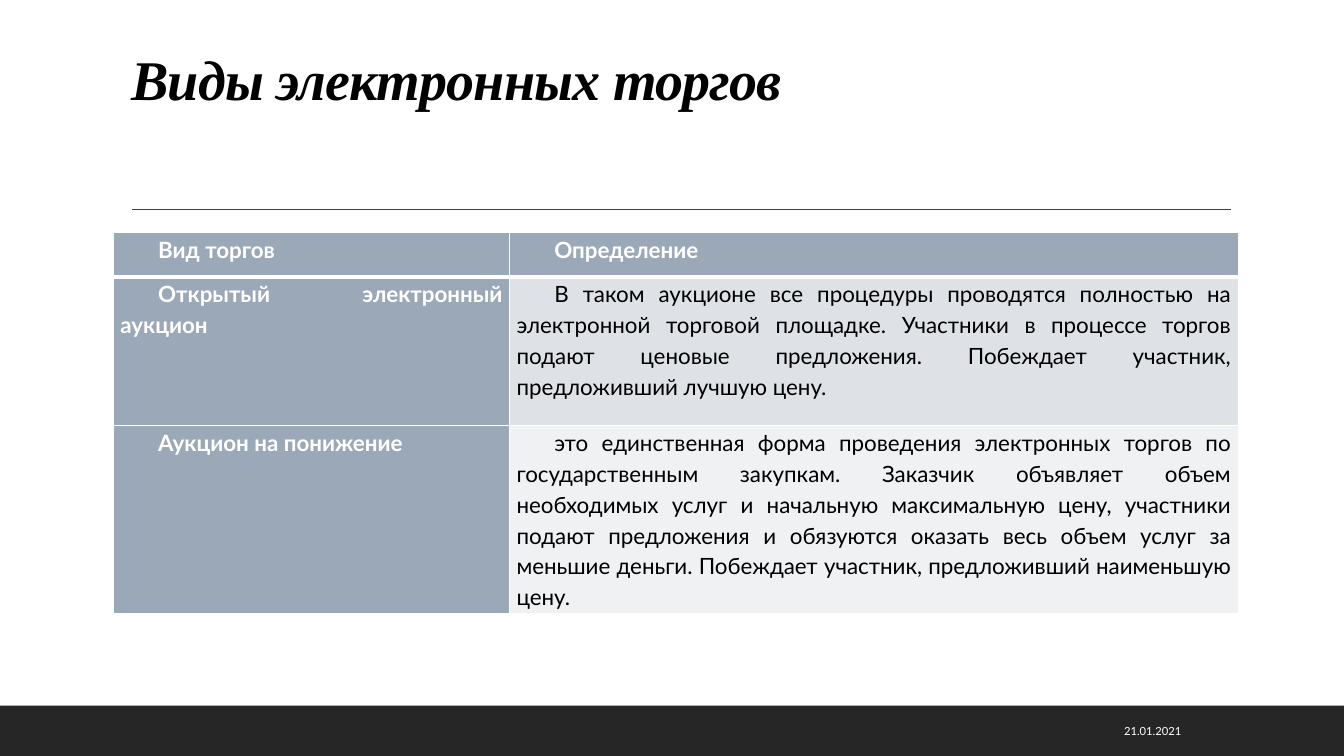
"""Build the slide on the kinds of electronic auctions."""
from typing import NamedTuple

from lxml.etree import SubElement
from pptx import Presentation
from pptx.dml.color import RGBColor
from pptx.enum.shapes import MSO_CONNECTOR, MSO_SHAPE
from pptx.enum.text import MSO_ANCHOR, MSO_AUTO_SIZE, PP_ALIGN
from pptx.oxml.ns import qn
from pptx.util import Pt

WHITE, BLACK, HEAD_FILL = "FFFFFF", "000000", "9BA8B7"


class Row(NamedTuple):
    kind: str
    definition: str
    height: float
    fill: str
    color: str
    bold: bool
    top: float
    bottom: float


ROWS = [
    Row("Вид торгов", "Определение", 31.7, HEAD_FILL, WHITE, True, 1, 3),
    Row("Открытый электронный аукцион",
        "В таком аукционе все процедуры проводятся полностью "
        "на электронной торговой площадке. Участники в процессе торгов "
        "подают ценовые предложения. Побеждает участник, "
        "предложивший лучшую цену.",
        106.5, "DEE1E6", BLACK, False, 3, 1),
    Row("Аукцион на понижение",
        "это единственная форма проведения электронных торгов "
        "по государственным закупкам. Заказчик объявляет объем "
        "необходимых услуг и начальную максимальную цену, участники "
        "подают предложения и обязуются оказать весь объем услуг "
        "за меньшие деньги. Побеждает участник, предложивший "
        "наименьшую цену.",
        133.9, "EFF1F3", BLACK, False, 1, 1),
]


def rgb(color: str) -> RGBColor:
    return RGBColor.from_string(color)


def add_run(p, text: str, size: float, color: str, bold=False, font="Lato"):
    r = p.add_run()
    r.text = text
    r.font.name, r.font.size, r.font.bold = font, Pt(size), bold
    r.font.color.rgb = rgb(color)
    return r


def add_title(s) -> None:
    sp = s.shapes.title
    sp.left, sp.top, sp.width, sp.height = Pt(86.4), Pt(22.3), Pt(792), Pt(114.5)
    tf = sp.text_frame
    tf.word_wrap, tf.auto_size = True, MSO_AUTO_SIZE.NONE
    tf.vertical_anchor, tf.margin_top = MSO_ANCHOR.TOP, Pt(15.2)
    p = tf.paragraphs[0]
    p.alignment, p.line_spacing = PP_ALIGN.LEFT, 0.9
    r = add_run(p, "Виды электронных торгов", 40, BLACK, True, "Times New Roman")
    r.font.italic = True
    r._r.get_or_add_rPr().set("spc", "-50")


def add_rule(s) -> None:
    line = s.shapes.add_connector(
        MSO_CONNECTOR.STRAIGHT, Pt(94.3), Pt(149.8), Pt(879.1), Pt(149.8))
    line.line.color.rgb, line.line.width = rgb("404040"), Pt(1)
    SubElement(line._element.spPr, qn("a:effectLst"))


def add_footer(s) -> None:
    bar = s.shapes.add_shape(MSO_SHAPE.RECTANGLE, Pt(0), Pt(504), Pt(960), Pt(36))
    bar.shadow.inherit = False
    bar.fill.solid()
    bar.fill.fore_color.rgb = rgb("262626")
    bar.line.fill.background()
    tf = s.shapes.add_textbox(Pt(647.3), Pt(507.6), Pt(203.8), Pt(28.8)).text_frame
    tf.word_wrap, tf.vertical_anchor = True, MSO_ANCHOR.MIDDLE
    p = tf.paragraphs[0]
    p.alignment = PP_ALIGN.RIGHT
    add_run(p, "21.01.2021", 8, WHITE)


def set_borders(cell, top: float, bottom: float) -> None:
    tcPr = cell._tc.get_or_add_tcPr()
    for side, width in (("L", 1), ("R", 1), ("T", top), ("B", bottom)):
        ln = SubElement(tcPr, qn(f"a:ln{side}"), w=str(Pt(width)))
        fill = SubElement(ln, qn("a:solidFill"))
        SubElement(fill, qn("a:srgbClr"), val=WHITE)


def fill_cell(cell, row: Row, text: str, fill: str, color: str, bold: bool) -> None:
    set_borders(cell, row.top, row.bottom)
    cell.fill.solid()
    cell.fill.fore_color.rgb = rgb(fill)
    cell.margin_left = cell.margin_right = Pt(5)
    cell.margin_top = cell.margin_bottom = Pt(0)
    p = cell.text_frame.paragraphs[0]
    pPr = p._p.get_or_add_pPr()
    pPr.set("marL", "0")
    pPr.set("indent", str(Pt(27)))
    p.alignment, p.line_spacing, p.space_after = PP_ALIGN.JUSTIFY, 1.15, Pt(10)
    add_run(p, text, 16, color, bold)


def add_auction_table(s) -> None:
    height = sum(row.height for row in ROWS)
    table = s.shapes.add_table(
        len(ROWS), 2, Pt(81), Pt(166), Pt(803.5), Pt(height)).table
    table.horz_banding = False
    table.columns[0].width, table.columns[1].width = Pt(283), Pt(520.5)
    for i, row in enumerate(ROWS):
        table.rows[i].height = Pt(row.height)
        fill_cell(table.cell(i, 0), row, row.kind, HEAD_FILL, WHITE, True)
        fill_cell(table.cell(i, 1), row, row.definition, row.fill, row.color, row.bold)


def main() -> None:
    prs = Presentation()
    prs.slide_width, prs.slide_height = Pt(960), Pt(540)
    s = prs.slides.add_slide(prs.slide_layouts[5])
    add_title(s)
    add_rule(s)
    add_auction_table(s)
    add_footer(s)
    prs.save("out.pptx")


if __name__ == "__main__":
    main()
